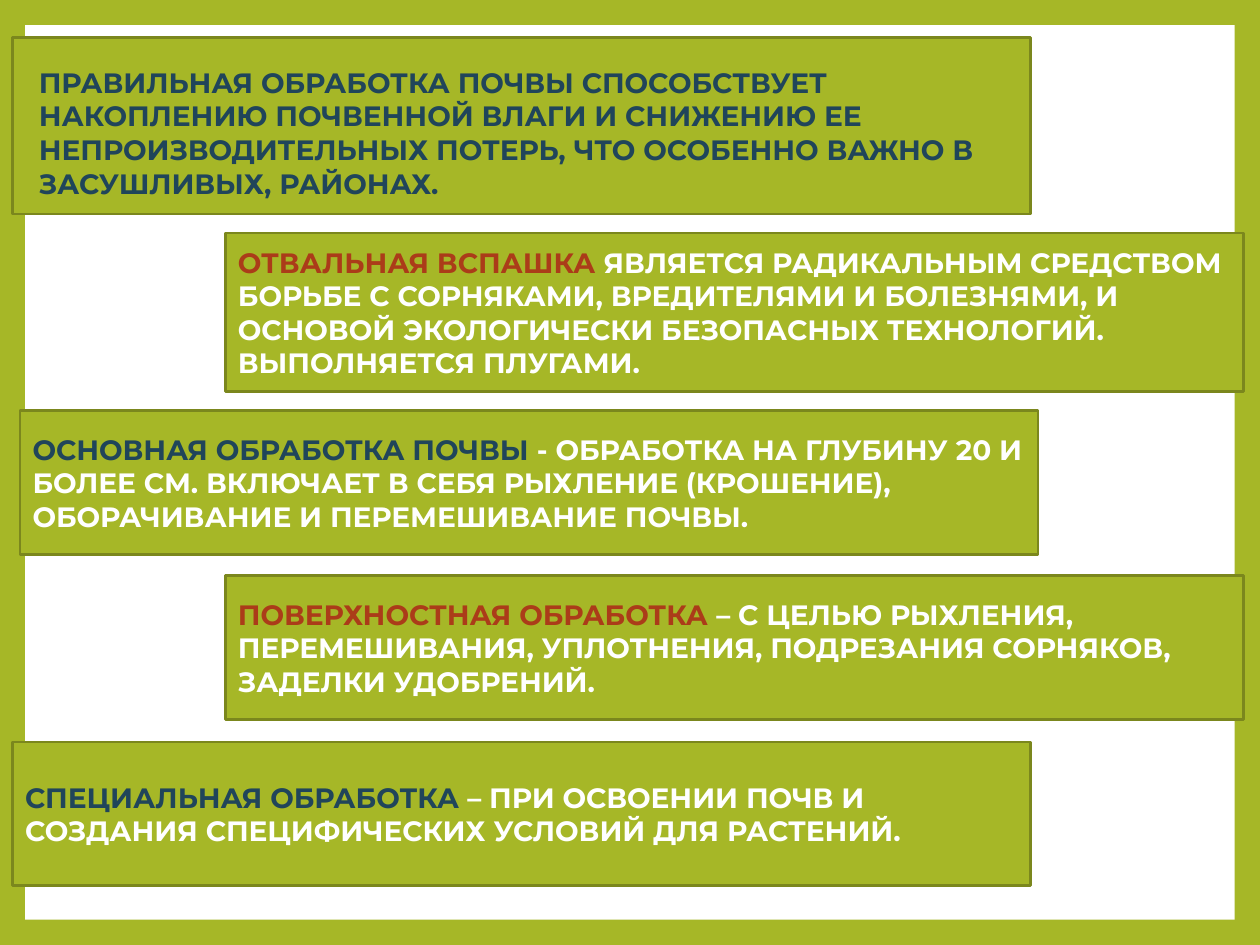
from pptx import Presentation
from pptx.dml.color import RGBColor
from pptx.enum.shapes import MSO_SHAPE
from pptx.enum.text import MSO_ANCHOR, MSO_AUTO_SIZE, PP_ALIGN
from pptx.util import Inches, Pt

RECTANGLE = MSO_SHAPE.RECTANGLE
MIDDLE = MSO_ANCHOR.MIDDLE
GROW = MSO_AUTO_SIZE.SHAPE_TO_FIT_TEXT
LEFT = PP_ALIGN.LEFT

COLORS = {
    "green": "A6B727",
    "olive": "7B871D",
    "navy": "20455A",
    "rust": "AB3C19",
    "white": "FFFFFF",
}
FONT = "Montserrat"

deck = Presentation()
deck.slide_width = Inches(10)
deck.slide_height = Inches(7.5)
COLUMN = deck.slide_width / 100
ROW = deck.slide_height / 75
slide = deck.slides.add_slide(deck.slide_layouts[6])
slide.background.fill.solid()
slide.background.fill.fore_color.rgb = RGBColor.from_string(COLORS["green"])


def add_panel(left, top, width, height, fill, outline=None):
    panel = slide.shapes.add_shape(
        RECTANGLE, int(left * COLUMN), int(top * ROW), int(width * COLUMN), int(height * ROW)
    )
    panel.shadow.inherit = False
    panel.fill.solid()
    panel.fill.fore_color.rgb = RGBColor.from_string(COLORS[fill])
    if outline:
        panel.line.color.rgb = RGBColor.from_string(COLORS[outline])
        panel.line.width = Pt(1.5)
    else:
        panel.line.fill.background()
    return panel


def write_text(frame, runs):
    frame.word_wrap = True
    paragraph = frame.paragraphs[0]
    paragraph.alignment = LEFT
    for wording, color in runs:
        run = paragraph.add_run()
        run.text = wording
        run.font.name = FONT
        run.font.size = Pt(16)
        run.font.bold = True
        run.font.color.rgb = RGBColor.from_string(COLORS[color])


add_panel(2, 2, 96, 71, "white")

PANEL_WIDTH = 80.8
add_panel(1, 3, PANEL_WIDTH, 14, "green", "olive")
intro = slide.shapes.add_textbox(
    int(2.1 * COLUMN), int(4.7 * ROW), int(79.7 * COLUMN), int(11.8 * ROW)
)
intro.text_frame.auto_size = GROW
write_text(intro.text_frame, [(
    "ПРАВИЛЬНАЯ ОБРАБОТКА ПОЧВЫ СПОСОБСТВУЕТ НАКОПЛЕНИЮ ПОЧВЕННОЙ ВЛАГИ "
    "И СНИЖЕНИЮ ЕЕ НЕПРОИЗВОДИТЕЛЬНЫХ ПОТЕРЬ, ЧТО ОСОБЕННО ВАЖНО "
    "В ЗАСУШЛИВЫХ, РАЙОНАХ.", "navy")])

tillage_types = [
    (17.9, 18.5, 12.6, "rust", "ОТВАЛЬНАЯ ВСПАШКА ",
     "ЯВЛЯЕТСЯ РАДИКАЛЬНЫМ СРЕДСТВОМ БОРЬБЕ С СОРНЯКАМИ, ВРЕДИТЕЛЯМИ И БОЛЕЗНЯМИ, "
     "И ОСНОВОЙ ЭКОЛОГИЧЕСКИ БЕЗОПАСНЫХ ТЕХНОЛОГИЙ. ВЫПОЛНЯЕТСЯ ПЛУГАМИ."),
    (1.6, 32.6, 11.4, "navy", "ОСНОВНАЯ ОБРАБОТКА ПОЧВЫ ",
     "- ОБРАБОТКА НА ГЛУБИНУ 20 И БОЛЕЕ СМ. ВКЛЮЧАЕТ В СЕБЯ РЫХЛЕНИЕ (КРОШЕНИЕ), "
     "ОБОРАЧИВАНИЕ И ПЕРЕМЕШИВАНИЕ ПОЧВЫ."),
    (17.9, 45.7, 11.4, "rust", "ПОВЕРХНОСТНАЯ ОБРАБОТКА ",
     "– С ЦЕЛЬЮ РЫХЛЕНИЯ, ПЕРЕМЕШИВАНИЯ, УПЛОТНЕНИЯ, ПОДРЕЗАНИЯ СОРНЯКОВ, "
     "ЗАДЕЛКИ УДОБРЕНИЙ."),
    (1, 58.9, 11.4, "navy", "СПЕЦИАЛЬНАЯ ОБРАБОТКА ",
     "– ПРИ ОСВОЕНИИ ПОЧВ И СОЗДАНИЯ СПЕЦИФИЧЕСКИХ УСЛОВИЙ ДЛЯ РАСТЕНИЙ."),
]
for left, top, height, term_color, term, definition in tillage_types:
    panel = add_panel(left, top, PANEL_WIDTH, height, "green", "olive")
    panel.text_frame.vertical_anchor = MIDDLE
    write_text(panel.text_frame, [(term, term_color), (definition, "white")])

deck.save("out.pptx")
